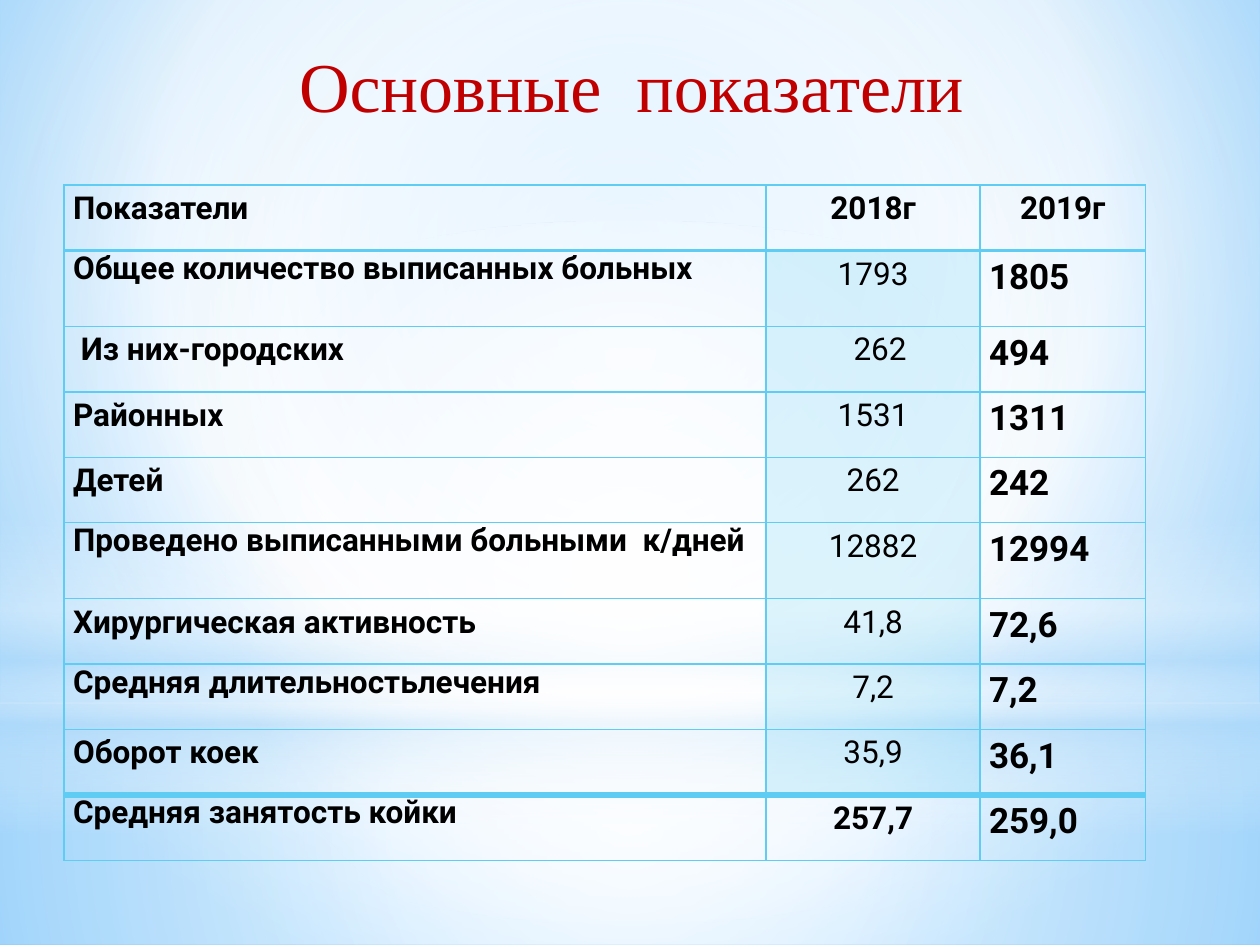
import pptx
import pptx.dml.color
import pptx.enum.shapes
import pptx.enum.text
import pptx.oxml
import pptx.oxml.ns
import pptx.util
from pptx.util import Inches

COLORS = {"sky": "9ED5FF", "white": "FFFFFF", "blue": "5BB9FF", "pale": "B4DCFA",
          "line": "5ECCF3", "red": "C00000", "black": "000000"}
ALIGN = pptx.enum.text.PP_ALIGN
SHAPE = pptx.enum.shapes.MSO_SHAPE
NS = pptx.oxml.ns.nsdecls("a")
CENTER = (50, 50, 50, 50)

# Label, 2018 value, 2019 value
ROWS = [
    ("Показатели", "2018г", "2019г"),
    ("Общее количество выписанных больных", "1793", "1805"),
    (" Из них-городских", "262", "494"),
    ("Районных", "1531", "1311"),
    ("Детей", "262", "242"),
    ("Проведено выписанными больными  к/дней", "12882", "12994"),
    ("Хирургическая активность", "41,8", "72,6"),
    ("Средняя длительностьлечения", "7,2", "7,2"),
    ("Оборот коек", "35,9", "36,1"),
    ("Средняя занятость койки", "257,7", "259,0"),
]
LAST = len(ROWS) - 1
TALL = (1, 5)
TIGHT = (1, 5, 7, 9)  # rows whose label has single line spacing
INDENT = 2


def rgb(name):
    return pptx.dml.color.RGBColor.from_string(COLORS[name])


def fade(owner, fill, stops, focus=None):
    """Fill with (position, colour, opacity) stops, round a focus or downwards."""
    fill.gradient()
    grad = owner.find(".//" + pptx.oxml.ns.qn("a:gradFill"))
    for child in list(grad):
        grad.remove(child)
    marks = "".join(
        f'<a:gs pos="{pos * 1000}"><a:srgbClr val="{COLORS[name]}">'
        f'<a:alpha val="{alpha * 1000}"/></a:srgbClr></a:gs>'
        for pos, name, alpha in stops)
    grad.append(pptx.oxml.parse_xml(f"<a:gsLst {NS}>{marks}</a:gsLst>"))
    if focus:
        rect = " ".join(f'{side}="{val * 1000}"' for side, val in zip("ltrb", focus))
        shade = f'<a:path {NS} path="circle"><a:fillToRect {rect}/></a:path>'
    else:
        shade = f'<a:lin {NS} ang="5400000" scaled="0"/>'
    grad.append(pptx.oxml.parse_xml(shade))


def add_back(slide, left, top, width, height):
    """Lay the sky and its soft glows over the given box."""
    fade(slide.element, slide.background.fill,
         [(0, "sky", 100), (60, "white", 100), (100, "blue", 100)], (20, 10, 20, 60))
    split = Inches(5.58)
    glows = [
        (SHAPE.RECTANGLE, split, height - split, CENTER,
         [(0, "white", 91), (37, "white", 76), (100, "pale", 79)]),
        (SHAPE.RECTANGLE, 0, split, CENTER,
         [(0, "white", 89), (48, "white", 62), (100, "pale", 79)]),
        (SHAPE.RECTANGLE, Inches(4.12), Inches(2.5), None,
         [(0, "white", 0), (29, "white", 30), (45, "pale", 40),
          (55, "white", 26), (65, "pale", 60), (100, "white", 0)]),
        (SHAPE.OVAL, Inches(1.75), split, CENTER,
         [(0, "white", 100), (56, "white", 0)]),
    ]
    for kind, drop, tall, focus, stops in glows:
        glow = slide.shapes.add_shape(kind, left, top + drop, width, tall)
        glow.shadow.inherit = False
        glow.line.fill.background()
        fade(glow.element, glow.fill, stops, focus)


def add_run(para, text, size, font, color, bold=False):
    run = para.add_run()
    run.text = text
    run.font.size = pptx.util.Pt(size)
    run.font.name = font
    run.font.bold = bold
    run.font.color.rgb = rgb(color)


def add_title(slide, left, top, width, height):
    title = slide.shapes.title
    slide.shapes.element.append(title.element)  # bring in front of the glows
    title.left, title.top, title.width, title.height = left, top, width, height
    frame = title.text_frame
    frame.word_wrap = True
    frame.vertical_anchor = pptx.enum.text.MSO_ANCHOR.TOP
    para = frame.paragraphs[0]
    para.alignment = ALIGN.CENTER
    add_run(para, "Основные  показатели ", 40, "Times New Roman", "red")


def add_edges(cell, row):
    """Rule the cell, heavier under the head and above the last row."""
    top = {1: 2, LAST: 4}.get(row, 1)
    base = {0: 2, LAST - 1: 4}.get(row, 1)
    props = cell._tc.get_or_add_tcPr()
    for spot, (side, size) in enumerate(zip("LRTB", (1, 1, top, base))):
        props.insert(spot, pptx.oxml.parse_xml(
            f'<a:ln{side} {NS} w="{size * 12700}"><a:solidFill>'
            f'<a:srgbClr val="{COLORS["line"]}"/></a:solidFill></a:ln{side}>'))


def tint(cell):
    cell.fill.solid()
    cell.fill.fore_color.rgb = rgb("line")
    color = cell._tc.tcPr.find(".//" + pptx.oxml.ns.qn("a:srgbClr"))
    color.append(pptx.oxml.parse_xml(f'<a:alpha {NS} val="20000"/>'))


def fill_cell(cell, row, col, text):
    body = 0 < row < LAST
    recent = col == 2 and row > 0
    cell.margin_left = cell.margin_right = Inches(0.07)
    cell.margin_top = cell.margin_bottom = 0
    if body and col == 1:
        tint(cell)
    else:
        cell.fill.background()
    if (row, col) == (INDENT, 1):
        cell.margin_left = Inches(0.18)
    add_edges(cell, row)
    para = cell.text_frame.paragraphs[0]
    centered = col == 1 or (row == 0 and col == 2)
    para.alignment = ALIGN.CENTER if centered else ALIGN.LEFT
    para.line_spacing = 1.0 if col == 0 and row in TIGHT else 1.15
    if recent:
        para.space_after = pptx.util.Pt(10)
    add_run(para, text, 20 if recent else 18, "Roboto", "black",
            bold=not (body and col == 1))


def add_grid(slide, left, top, width, height):
    frame = slide.shapes.add_table(len(ROWS), 3, left, top, width, height)
    table = frame.table
    table.first_row = table.horz_banding = False
    for col, wide in zip(table.columns, (5.57, 1.7, 1.31)):
        col.width = Inches(wide)
    for row, texts in enumerate(ROWS):
        table.rows[row].height = Inches(0.6 if row in TALL else 0.52)
        for col, text in enumerate(texts):
            fill_cell(table.cell(row, col), row, col, text)


def main():
    deck = pptx.Presentation()
    deck.slide_width, deck.slide_height = Inches(10), Inches(7.5)
    slide = deck.slides.add_slide(deck.slide_layouts[5])
    add_back(slide, 0, 0, deck.slide_width, deck.slide_height)
    add_title(slide, Inches(0.67), Inches(0.29), Inches(8.82), Inches(1.25))
    add_grid(slide, Inches(0.51), Inches(1.47), Inches(8.58), Inches(5.35))
    deck.save("out.pptx")


if __name__ == "__main__":
    main()
